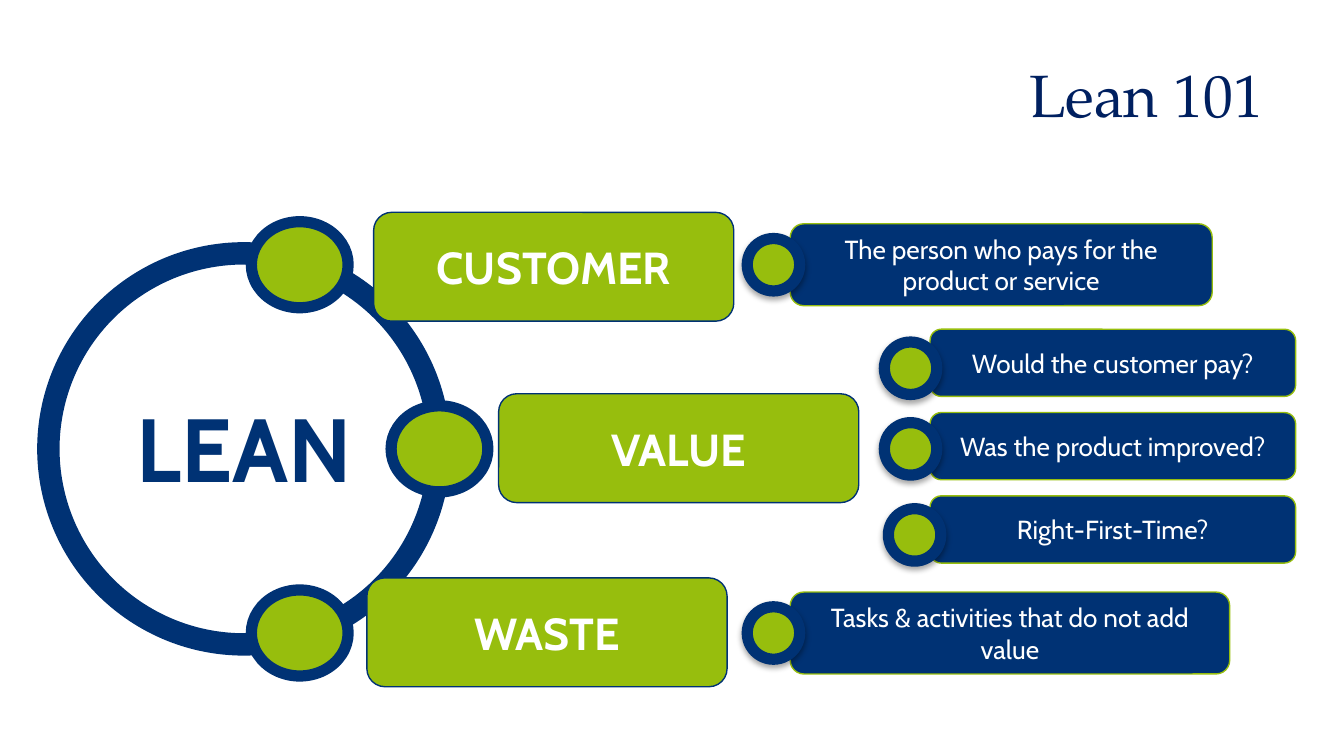
from collections import namedtuple

from lxml import etree
from pptx import Presentation
from pptx.dml.color import RGBColor
from pptx.enum.shapes import MSO_SHAPE
from pptx.enum.text import MSO_ANCHOR, PP_ALIGN
from pptx.oxml import parse_xml
from pptx.oxml.ns import nsdecls, qn
from pptx.util import Inches, Pt

SLIDE_W = 10
SLIDE_H = SLIDE_W * 9 / 16
NAVY = RGBColor(0x00, 0x32, 0x74)
TITLE_NAVY = RGBColor(0x00, 0x20, 0x60)
GREEN = RGBColor(0x97, 0xBE, 0x0D)
WHITE = RGBColor(0xFF, 0xFF, 0xFF)
BODY_FONT, TITLE_FONT = "Cabin", "TeX Gyre Pagella"

MIDDLE = 3.34       # centre line of the ring and of the VALUE branch
BRANCH_PITCH = 1.37
ANSWER_PITCH = 0.62
LABEL_W, LABEL_H = 2.68, 0.81
NODE_W, NODE_H = 0.72, 0.64
DOT = 0.39

Box = namedtuple("Box", "left top width height")
Answer = namedtuple("Answer", "text box dot_left dot_middle")


def box_at(left, middle, width, height):
    """Box given by its left edge and its vertical centre."""
    return Box(left, middle - height / 2, width, height)


def write(frame, text, size, color, bold=False, font=BODY_FONT,
          align=PP_ALIGN.CENTER, anchor=MSO_ANCHOR.MIDDLE, wrap=True):
    frame.word_wrap = wrap
    frame.vertical_anchor = anchor
    frame.text = text
    paragraph = frame.paragraphs[0]
    paragraph.alignment = align
    for run in paragraph.runs:
        run.font.name, run.font.size = font, Pt(size)
        run.font.bold, run.font.color.rgb = bold, color


def add_text(slide, box, text, size, color, **style):
    frame = slide.shapes.add_textbox(*map(Inches, box)).text_frame
    write(frame, text, size, color, **style)


def add_outlined(slide, preset, box, fill, line, weight):
    shape = slide.shapes.add_shape(preset, *map(Inches, box))
    shape.shadow.inherit = False
    shape.fill.solid()
    shape.fill.fore_color.rgb = fill
    shape.line.color.rgb = line
    shape.line.width = Pt(weight)
    return shape


def add_soft_shadow(shape):
    effects = shape._element.spPr.find(qn("a:effectLst"))
    shadow = parse_xml(
        f'<a:outerShdw {nsdecls("a")} blurRad="{Pt(3.1)}" dist="{Pt(1.8)}" '
        'dir="5400000" rotWithShape="0"/>')
    color = etree.SubElement(shadow, qn("a:srgbClr"), val="000000")
    etree.SubElement(color, qn("a:alpha"), val="35000")
    effects.append(shadow)


def add_title(slide, box):
    add_text(slide, box, "Lean 101", 32, TITLE_NAVY, font=TITLE_FONT,
             align=PP_ALIGN.RIGHT)


def add_ring(slide, box):
    add_outlined(slide, MSO_SHAPE.OVAL, box, WHITE, NAVY, 12)
    word = Box(box.left + box.width * 0.185, box.top + box.height * 0.34,
               box.width * 0.63, box.height * 0.31)
    add_text(slide, word, "LEAN", 48, NAVY, bold=True,
             anchor=MSO_ANCHOR.TOP, wrap=False)


def add_branch(slide, text, label_box, node_box):
    """Green label and its node on the ring."""
    label = add_outlined(slide, MSO_SHAPE.ROUNDED_RECTANGLE, label_box,
                         GREEN, NAVY, 0.75)
    write(label.text_frame, text, 24, WHITE, bold=True)
    add_outlined(slide, MSO_SHAPE.OVAL, node_box, GREEN, NAVY, 6)


def add_answer(slide, answer):
    """Navy panel with a shadowed dot over its left edge."""
    panel = add_outlined(slide, MSO_SHAPE.ROUNDED_RECTANGLE, answer.box,
                         NAVY, GREEN, 0.75)
    write(panel.text_frame, answer.text, 14, WHITE)
    dot = box_at(answer.dot_left, answer.dot_middle, DOT, DOT)
    add_soft_shadow(add_outlined(slide, MSO_SHAPE.OVAL, dot, GREEN, NAVY, 6))


def main():
    deck = Presentation()
    deck.slide_width, deck.slide_height = Inches(SLIDE_W), Inches(SLIDE_H)
    slide = deck.slides.add_slide(deck.slide_layouts[6])

    add_title(slide, Box(0.05 * SLIDE_W, 0.23, 0.9 * SLIDE_W, 0.94))
    add_ring(slide, box_at(0.36, MIDDLE, 2.91, 2.91))

    upper, lower = MIDDLE - BRANCH_PITCH, MIDDLE + BRANCH_PITCH
    branches = [("CUSTOMER", 2.78, 1.58, 1.87, upper),
                ("VALUE", 3.71, 2.93, 2.91, MIDDLE),
                ("WASTE", 2.73, 4.3, 1.87, lower)]
    for text, left, top, node_left, node_middle in branches:
        add_branch(slide, text, Box(left, top, LABEL_W, LABEL_H),
                   box_at(node_left, node_middle, NODE_W, NODE_H))

    answers = [
        Answer("The person who pays for the product or service",
               box_at(5.88, upper, 3.14, 0.61), 5.56, upper),
        Answer("Tasks & activities that do not add value",
               box_at(5.88, lower, 3.27, 0.61), 5.56, lower)]
    questions = [("Would the customer pay?", 6.58, 2.74),
                 ("Was the product improved?", 6.58, MIDDLE),
                 ("Right-First-Time?", 6.61, 3.98)]
    for row, (text, dot_left, dot_middle) in enumerate(questions):
        panel = Box(6.92, 2.45 + row * ANSWER_PITCH, 2.72, 0.5)
        answers.append(Answer(text, panel, dot_left, dot_middle))
    for answer in answers:
        add_answer(slide, answer)

    deck.save("out.pptx")


if __name__ == "__main__":
    main()
